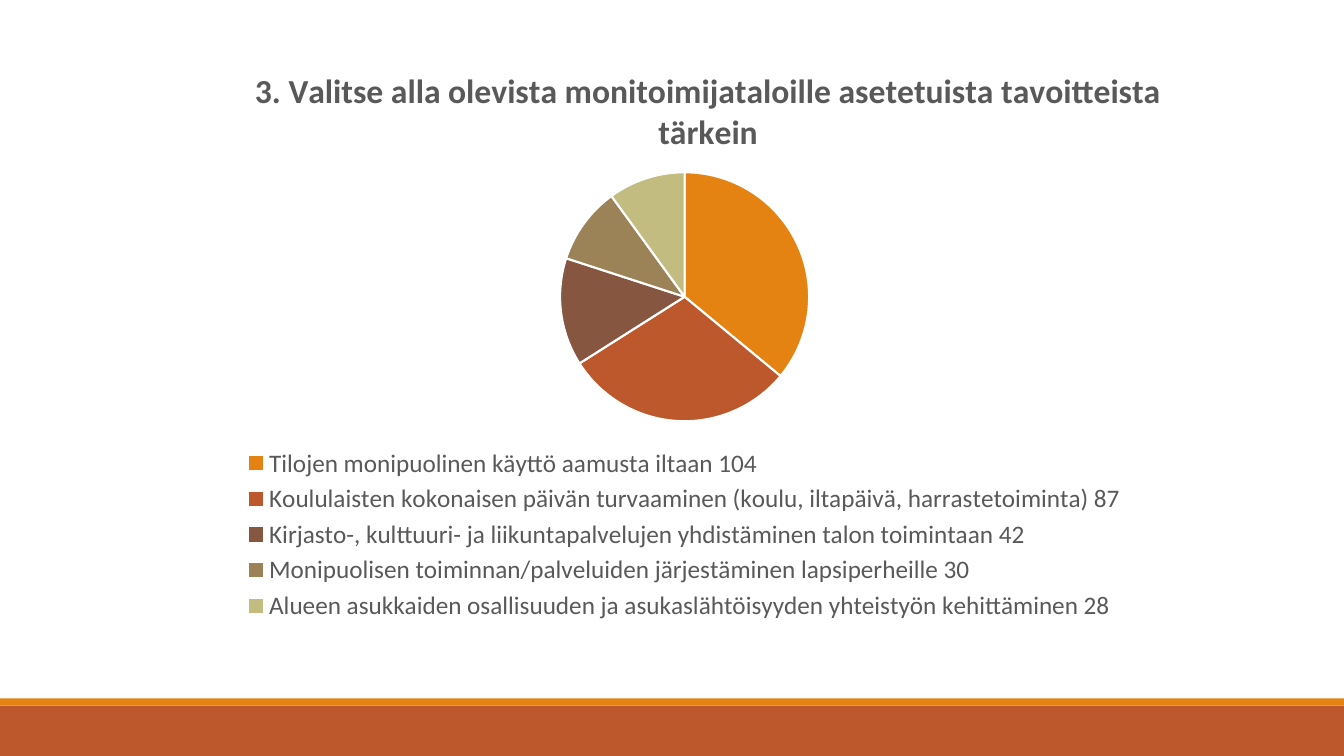
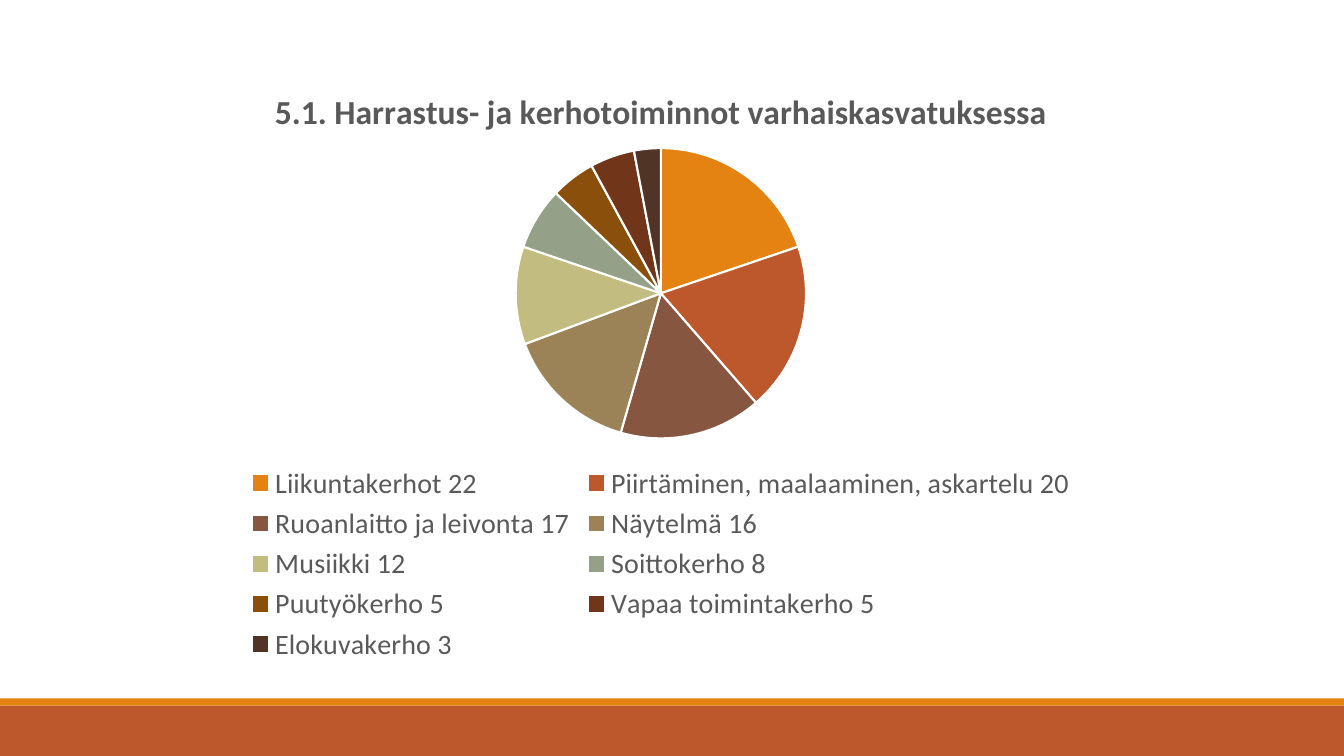
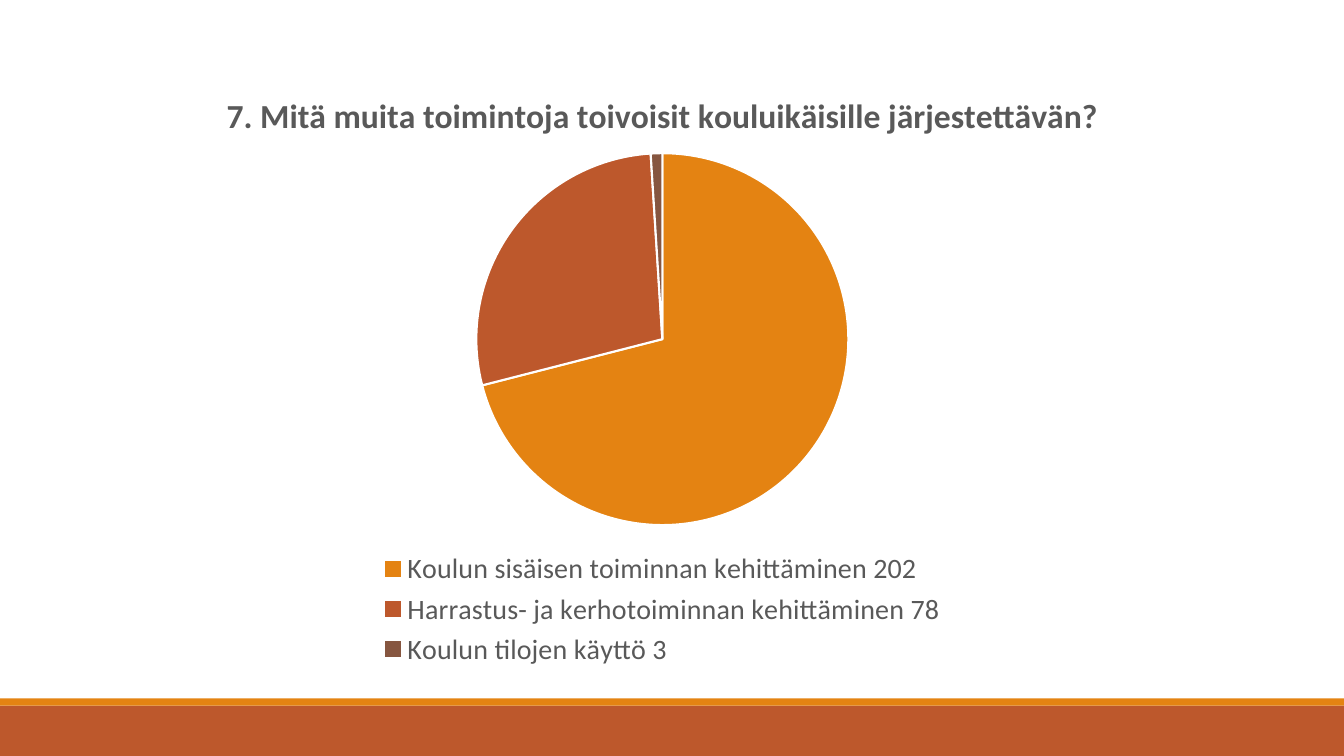
from lxml import etree
from pptx import Presentation
from pptx.chart.data import CategoryChartData
from pptx.dml.color import RGBColor
from pptx.enum.chart import XL_CHART_TYPE, XL_LEGEND_POSITION
from pptx.enum.shapes import MSO_SHAPE
from pptx.oxml.ns import qn
from pptx.util import Inches, Pt

PIE = XL_CHART_TYPE.PIE
BOTTOM = XL_LEGEND_POSITION.BOTTOM
RECT = MSO_SHAPE.RECTANGLE

WIDE, HIGH = 13.33, 7.5
FONT, GREY, WHITE = "Calibri", "595959", "FFFFFF"
HUES = ["E48312", "BD582C", "865640", "9B8357", "C2BC80",
        "94A088", "894F0B", "71351A", "503426"]
BANDS = [(7, 0.5, HUES[1]), (6.93, 0.07, HUES[0])]  # top, height, fill

# box: left, top, width, height of the chart; pie: top and diameter (inches)
SLIDES = [
    {
        "title": "3. Valitse alla olevista monitoimijataloille asetetuista tavoitteista tärkein",
        "box": (0.95, 0.38, 11.68, 5.83),
        "pie": (1.71, 2.47),
        "spot": {"x": 0.13, "y": 0.04},
        "size": 18,
        "rows": [
            ("Tilojen monipuolinen käyttö aamusta iltaan 104", 36),
            ("Koululaisten kokonaisen päivän turvaaminen (koulu, iltapäivä, harrastetoiminta) 87", 30),
            ("Kirjasto-, kulttuuri- ja liikuntapalvelujen yhdistäminen talon toimintaan 42", 14),
            ("Monipuolisen toiminnan/palveluiden järjestäminen lapsiperheille 30", 10),
            ("Alueen asukkaiden osallisuuden ja asukaslähtöisyyden yhteistyön kehittäminen 28", 10),
        ],
    },
    {
        "title": "5.1. Harrastus- ja kerhotoiminnot varhaiskasvatuksessa",
        "box": (0.77, 0.65, 11.57, 5.97),
        "pie": (1.47, 2.88),
        "spot": None,
        "size": 20,
        "rows": [
            ("Liikuntakerhot 22", 20),
            ("Piirtäminen, maalaaminen, askartelu 20", 19),
            ("Ruoanlaitto ja leivonta 17", 16),
            ("Näytelmä 16", 15),
            ("Musiikki 12", 11),
            ("Soittokerho 8", 7),
            ("Puutyökerho 5", 5),
            ("Vapaa toimintakerho 5", 5),
            ("Elokuvakerho 3", 3),
        ],
    },
    {
        "title": "7. Mitä muita toimintoja toivoisit kouluikäisille järjestettävän?",
        "box": (0.86, 0.69, 11.42, 5.98),
        "pie": (1.52, 3.69),
        "spot": None,
        "size": 20,
        "rows": [
            ("Koulun sisäisen toiminnan kehittäminen 202", 71),
            ("Harrastus- ja kerhotoiminnan kehittäminen 78", 28),
            ("Koulun tilojen käyttö 3", 1),
        ],
    },
]


def paint(color, tone):
    color.rgb = RGBColor.from_string(tone)


def place(after, spot):
    """Put a manual layout, in shares of the chart, just before an element."""
    home = after.getparent()
    for old in home.findall(qn("c:layout")):
        home.remove(old)
    layout = etree.Element(qn("c:layout"))
    manual = etree.SubElement(layout, qn("c:manualLayout"))
    if "w" in spot:
        etree.SubElement(manual, qn("c:layoutTarget"), val="inner")
    for axis in "xy":
        etree.SubElement(manual, qn(f"c:{axis}Mode"), val="edge")
    for key, share in spot.items():
        etree.SubElement(manual, qn(f"c:{key}"), val=f"{share:.4f}")
    after.addprevious(layout)


deck = Presentation()
deck.slide_width, deck.slide_height = Inches(WIDE), Inches(HIGH)

for page in SLIDES:
    slide = deck.slides.add_slide(deck.slide_layouts[6])
    for top, high, tone in BANDS:
        band = slide.shapes.add_shape(RECT, 0, Inches(top), Inches(WIDE), Inches(high))
        band.shadow.inherit = False
        band.fill.solid()
        paint(band.fill.fore_color, tone)
        band.line.fill.background()

    names, shares = zip(*page["rows"])
    data = CategoryChartData()
    data.categories = names
    data.add_series("Series 1", shares)
    box = page["box"]
    chart = slide.shapes.add_chart(PIE, *map(Inches, box), data).chart

    chart.has_title = True
    words = chart.chart_title.text_frame
    words.text = page["title"]
    chart.has_legend = True
    chart.legend.position = BOTTOM
    chart.legend.include_in_layout = False
    styles = [
        (chart.font, {"name": FONT, "size": Pt(10)}),
        (words.paragraphs[0].runs[0].font, {"name": FONT, "size": Pt(24), "bold": True}),
        (chart.legend.font, {"name": FONT, "size": Pt(page["size"]), "bold": False}),
    ]
    for font, style in styles:
        for key, value in style.items():
            setattr(font, key, value)
        paint(font.color, GREY)

    plot = chart.plots[0]
    plot.vary_by_categories = True
    for i, tone in enumerate(HUES[:len(names)]):
        look = plot.series[0].points[i].format
        look.fill.solid()
        paint(look.fill.fore_color, tone)
        paint(look.line.color, WHITE)
        look.line.width = Pt(1.5)

    top, size = page["pie"]
    wide, high = size / box[2], size / box[3]
    spot = {"x": (1 - wide) / 2, "y": (top - box[1]) / box[3], "w": wide, "h": high}
    place(chart.element.find(".//" + qn("c:pieChart")), spot)
    if page["spot"]:
        place(chart.element.find(".//" + qn("c:title") + "/" + qn("c:overlay")), page["spot"])

deck.save("out.pptx")
